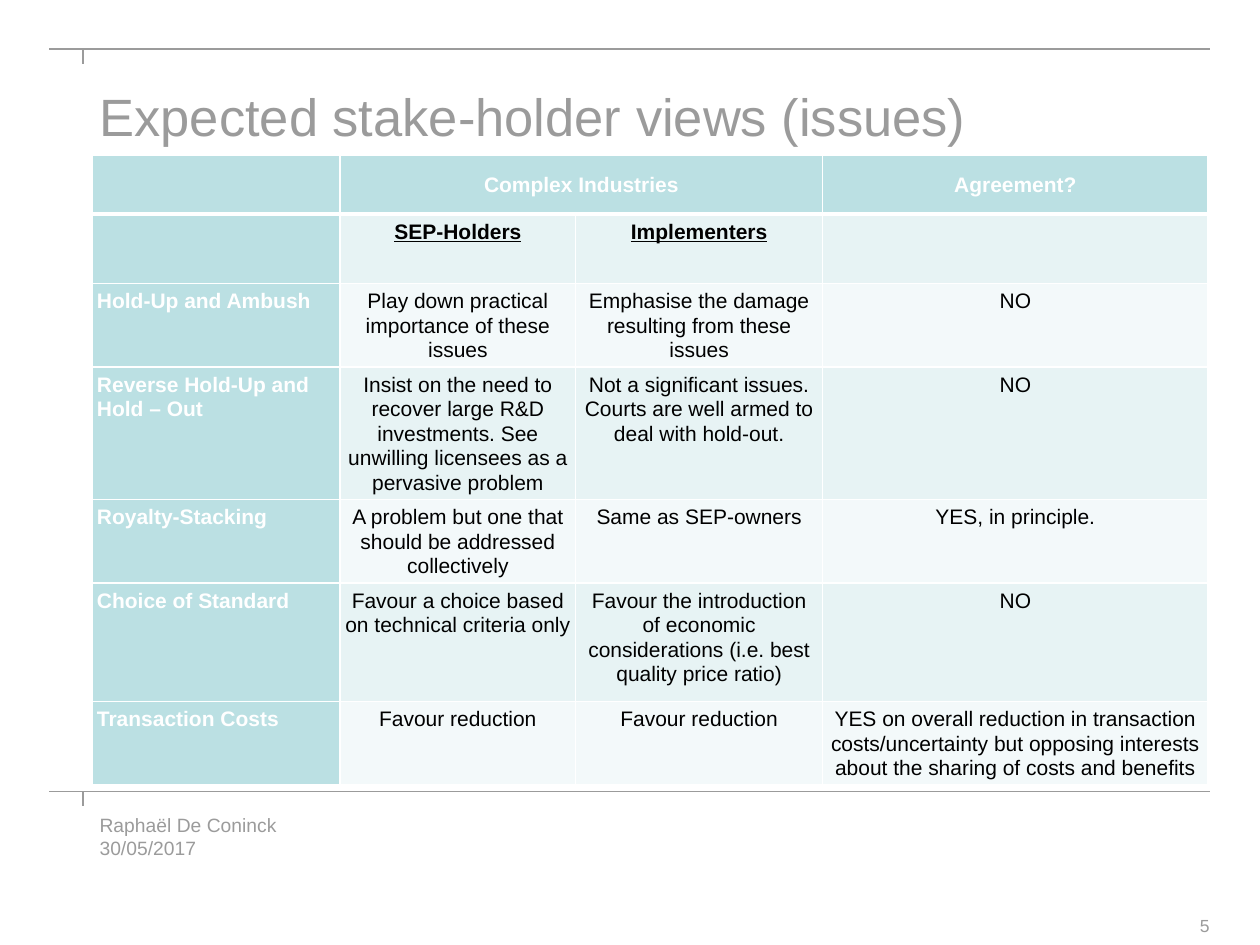
from pptx import Presentation
from pptx.dml.color import RGBColor
from pptx.enum.shapes import MSO_CONNECTOR
from pptx.enum.text import MSO_ANCHOR, PP_ALIGN
from pptx.oxml import parse_xml
from pptx.oxml.ns import nsdecls
from pptx.util import Inches, Pt

LEFT, CENTER, RIGHT = PP_ALIGN.LEFT, PP_ALIGN.CENTER, PP_ALIGN.RIGHT
TOP, MIDDLE, BOTTOM = MSO_ANCHOR.TOP, MSO_ANCHOR.MIDDLE, MSO_ANCHOR.BOTTOM
STRAIGHT = MSO_CONNECTOR.STRAIGHT

COLORS = {
    "grey": "9B9B9B", "white": "FFFFFF", "black": "000000",
    "header": "BBE0E3", "band_dark": "E7F3F4", "band_light": "F3F9FA",
}
COLUMN_WIDTHS = [19.7, 18.7, 19.6, 30.6]
ROW_HEIGHTS = [4.7, 5.5, 4.9, 9.4, 6.3, 9.4, 6.3]
VIEWS = [
    ["", "Complex Industries", "", "Agreement?"],
    ["", "SEP-Holders", "Implementers", ""],
    ["Hold-Up and Ambush",
     "Play down practical importance of these issues",
     "Emphasise the damage resulting from these issues", "NO"],
    ["Reverse Hold-Up and Hold – Out",
     "Insist on the need to recover large R&D investments. "
     "See unwilling licensees as a pervasive problem",
     "Not a significant issues. Courts are well armed to deal with hold-out.", "NO"],
    ["Royalty-Stacking",
     "A problem but one that should be addressed collectively",
     "Same as SEP-owners", "YES, in principle."],
    ["Choice of Standard",
     "Favour a choice based on technical criteria only",
     "Favour the introduction of economic considerations (i.e. best quality price ratio)",
     "NO"],
    ["Transaction Costs", "Favour reduction", "Favour reduction",
     "YES on overall reduction in transaction costs/uncertainty "
     "but opposing interests about the sharing of costs and benefits"],
]


def color(name):
    return RGBColor.from_string(COLORS[name])


def grid(units):
    """Convert grid units to a length: the slide is 100 columns by 75 rows."""
    return Inches(units / 10)


def write(frame, text, size=12, ink="grey", bold=False, underline=False,
          align=LEFT, leading=None, after=0):
    """Write one paragraph per line of text."""
    for index, line in enumerate(text.split("\n")):
        para = frame.add_paragraph() if index else frame.paragraphs[0]
        para.alignment = align
        para.space_after = Pt(after)
        if leading:
            para.line_spacing = Pt(leading)
        span = para.add_run()
        span.text = line
        span.font.name = "Arial"
        span.font.size = Pt(size)
        span.font.bold = bold
        span.font.underline = underline
        span.font.color.rgb = color(ink)


def set_borders(cell, top, bottom):
    properties = cell._tc.get_or_add_tcPr()
    widths = {"lnL": 1, "lnR": 1, "lnT": top, "lnB": bottom}
    for index, (side, width) in enumerate(widths.items()):
        properties.insert(index, parse_xml(
            f'<a:{side} {nsdecls("a")} w="{Pt(width)}"><a:solidFill>'
            f'<a:srgbClr val="{COLORS["white"]}"/></a:solidFill></a:{side}>'))


class ViewsSlide:
    def __init__(self, deck):
        self.slide = deck.slides.add_slide(deck.slide_layouts[6])

    def line(self, x1, y1, x2, y2):
        rule = self.slide.shapes.add_connector(
            STRAIGHT, grid(x1), grid(y1), grid(x2), grid(y2))
        rule.line.color.rgb = color("grey")
        rule.line.width = Pt(0.75)
        rule._element.spPr.append(parse_xml(f'<a:effectLst {nsdecls("a")}/>'))

    def ruled_edge(self, y):
        """Draw a full-width rule with a short tick hanging below it."""
        self.line(3.9, y, 96, y)
        self.line(6.6, y, 6.6, y + 1.2)

    def text(self, x, y, width, height, text, anchor=TOP, **style):
        box = self.slide.shapes.add_textbox(grid(x), grid(y), grid(width), grid(height))
        frame = box.text_frame
        frame.word_wrap = True
        frame.vertical_anchor = anchor
        frame.margin_left = frame.margin_right = 0
        frame.margin_top = frame.margin_bottom = 0
        write(frame, text, **style)

    def cell(self, cell, row, column, text):
        header, label = row == 0, column == 0
        band = "band_dark" if row % 2 else "band_light"
        cell.fill.solid()
        cell.fill.fore_color.rgb = color("header" if header or label else band)
        set_borders(cell, top=3 if row == 1 else 1, bottom=3 if header else 1)
        if not text:
            return
        cell.margin_left = cell.margin_right = grid(0.4)
        cell.margin_top = cell.margin_bottom = grid(0 if header else 0.4)
        cell.vertical_anchor = MIDDLE if header else TOP
        write(cell.text_frame, text, ink="white" if header or label else "black",
              bold=row < 2 or label, underline=row == 1,
              align=LEFT if label else CENTER, leading=14, after=6)

    def table(self, x, y, widths, heights, rows):
        table = self.slide.shapes.add_table(
            len(heights), len(widths), grid(x), grid(y),
            grid(sum(widths)), grid(sum(heights))).table
        table.first_row = table.horz_banding = False
        for column, width in zip(table.columns, widths):
            column.width = grid(width)
        for row, height in zip(table.rows, heights):
            row.height = grid(height)
        table.cell(0, 1).merge(table.cell(0, 2))
        for row, texts in enumerate(rows):
            for column, text in enumerate(texts):
                self.cell(table.cell(row, column), row, column, text)


def main():
    deck = Presentation()
    deck.slide_width, deck.slide_height = grid(100), grid(75)
    page = ViewsSlide(deck)
    for y in (3.9, 62.8):
        page.ruled_edge(y)
    page.text(7.9, 64.6, 45.5, 3.6, "Raphaël De Coninck\n30/05/2017", size=11, leading=13)
    page.text(7.9, 6.7, 85, 7.2, "Expected stake-holder views (issues)", size=30)
    page.table(7.3, 12.3, COLUMN_WIDTHS, ROW_HEIGHTS, VIEWS)
    page.text(89.2, 72.5, 6.8, 1.8, "5", anchor=BOTTOM, size=10, align=RIGHT)
    deck.save("out.pptx")


if __name__ == "__main__":
    main()
